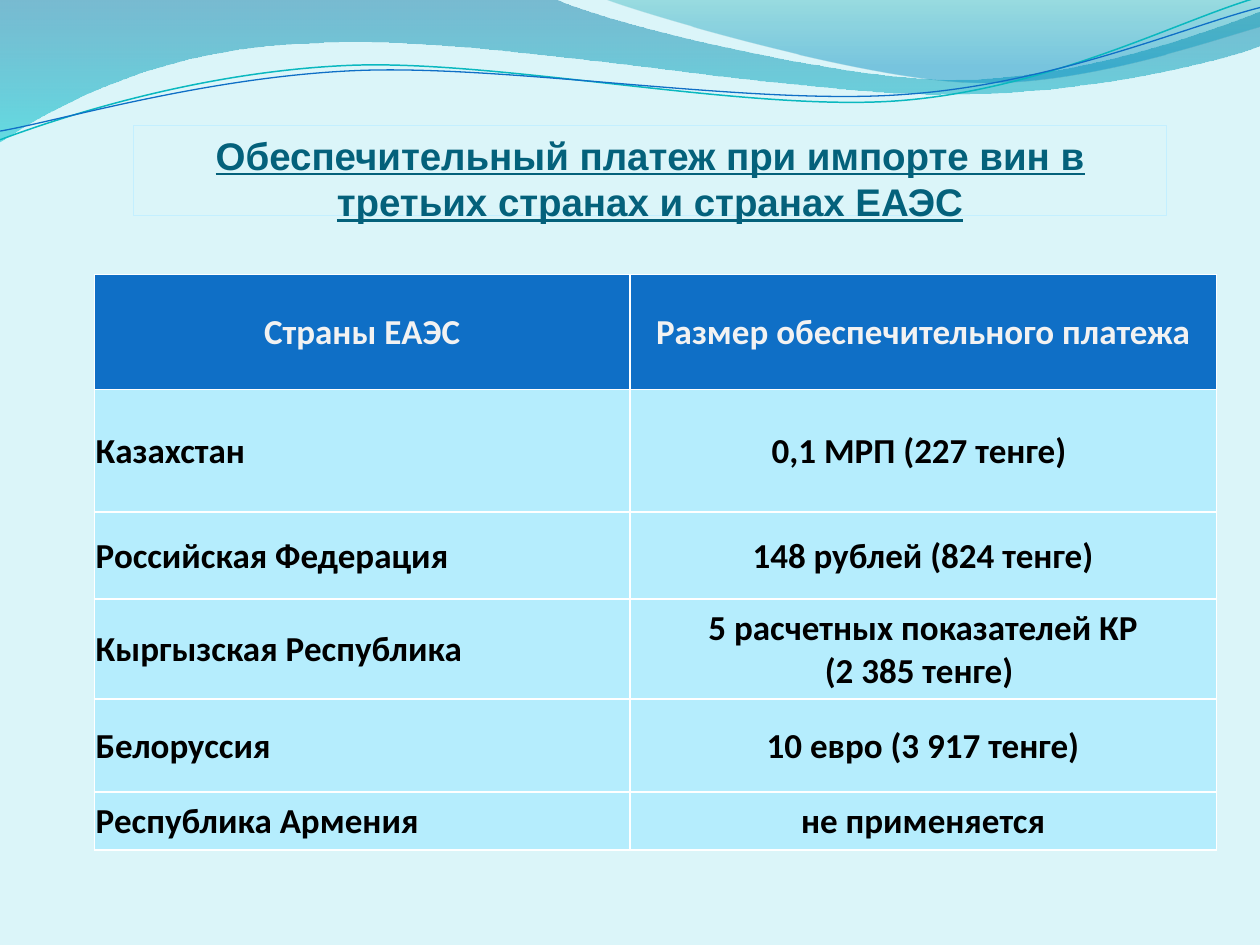
from lxml import etree
from pptx import Presentation
from pptx import util as u
from pptx.dml.color import RGBColor
from pptx.enum import text
from pptx.oxml.ns import qn

COLORS = {
    "background": "DBF5F9", "title": "04617B", "title_border": "C4EFFF",
    "header": "0F6FC6", "header_text": "F2F2F2", "body": "B5EDFD",
    "body_text": "000000", "border": "FFFFFF",
    "teal_line": "0AB8BF", "blue_line": "0F6FC6",
    "deep_blue": "0074A1", "aqua": "00C6CF", "sea": "00A1A9", "sky": "008BBF",
}

# Each wave is a start point, then line ends (x, y) or cubic curves (six numbers).
WIDE_WAVE = [
    (0, 0), (316.8, -0.7),
    (342.7, 12.2, 478.1, 45.4, 545.8, 45.4), (614.2, 45.4, 689.8, 18.7, 720, 6.5),
    (720.7, 25.9),
    (707.8, 31.7, 626.4, 54.7, 537.1, 54), (447.8, 54, 275, 20.2, 185, 24.5),
    (92.9, 25.9, 33.1, 59.8, -0.7, 81.4), (0, 0),
]
RIGHT_WAVE = [
    (344.9, -0.7),
    (366.5, 7.9, 491, 44.6, 553.7, 46.8), (616.3, 49.7, 691.9, 23, 720, 15.1),
    (720, 0), (344.9, -0.7),
]
TEAL_CURVE = [
    (0, 79.9),
    (34.6, 67, 113.8, 41, 199.4, 37.4), (284.4, 33.8, 427, 64.1, 513.4, 57.6),
    (599.8, 51.1, 675.4, 10.8, 718.6, -1.4),
]
BLUE_CURVE = [
    (0, 74.9),
    (33.8, 69.1, 118.1, 43.9, 203.8, 40.3), (290.2, 36.7, 429.8, 60.5, 516.2, 54),
    (601.9, 48.2, 677.5, 15.1, 720, 4.3),
]

ROWS = [
    ("Страны ЕАЭС", "Размер обеспечительного платежа"),
    ("Казахстан", "0,1 МРП (227 тенге) "),
    ("Российская Федерация", "148 рублей (824 тенге)"),
    ("Кыргызская Республика ", "5 расчетных показателей КР\n(2 385 тенге) "),
    ("Белоруссия ", "10 евро (3 917 тенге)"),
    ("Республика Армения ", "не применяется"),
]
COLUMN_WIDTHS = [306, 335]
ROW_HEIGHTS = [65.8, 70, 49.8, 57.1, 53.2, 33.1]


def rgb(name):
    return RGBColor.from_string(COLORS[name])


def write_text(frame, content, size, font, color, align, underline=None):
    """Fill a text frame with bold text, one paragraph per line."""
    frame.word_wrap = True
    frame.text = content
    for para in frame.paragraphs:
        para.alignment = align
        for span in para.runs:
            span.font.size = u.Pt(size)
            span.font.name = font
            span.font.bold = True
            span.font.underline = underline
            span.font.color.rgb = rgb(color)


def add_outline(page, wave, close):
    """Build the outline from segment ends, then bend the curved segments."""
    ends = [(u.Pt(segment[-2]), u.Pt(segment[-1])) for segment in wave]
    builder = page.shapes.build_freeform(*ends[0])
    builder.add_line_segments(ends[1:], close=close)
    shape = builder.convert_to_shape()
    shape.shadow.inherit = False
    lines = list(shape.element.iter(qn("a:lnTo")))
    for line, segment in zip(lines, wave[1:]):
        if len(segment) == 6:
            line.tag = qn("a:cubicBezTo")
            line.clear()
            for x, y in zip(segment[::2], segment[1::2]):
                etree.SubElement(line, qn("a:pt"), x=str(u.Pt(x) - shape.left),
                                 y=str(u.Pt(y) - shape.top))
    return shape


def add_wave(page, wave, stops):
    """Add a vertical gradient wave; stops are (position, color, opacity percent)."""
    shape = add_outline(page, wave, close=True)
    shape.line.fill.background()
    shape.fill.gradient()
    shape.fill.gradient_angle = 270
    for stop, (position, color, opacity) in zip(shape.fill.gradient_stops, stops):
        stop.position = position
        stop.color.rgb = rgb(color)
    fill_colors = shape.element.spPr.iter(qn("a:srgbClr"))
    for node, (position, color, opacity) in zip(fill_colors, stops):
        etree.SubElement(node, qn("a:alpha"), val=str(opacity * 1000))


def add_curve(page, wave, color, width):
    shape = add_outline(page, wave, close=False)
    shape.fill.background()
    shape.line.color.rgb = rgb(color)
    shape.line.width = u.Pt(width)


def add_title(page):
    title = page.shapes.title
    page.shapes.element.append(title.element)  # in front of the waves
    title.left, title.top, title.width, title.height = map(u.Pt, (76.3, 71.6, 590.4, 51.6))
    title.line.color.rgb = rgb("title_border")
    title.line.width = u.Pt(0.75)
    frame = title.text_frame
    write_text(frame, "Обеспечительный платеж при импорте вин в третьих странах и странах ЕАЭС",
               size=22, font="Arial", color="title",
               align=text.PP_ALIGN.CENTER, underline=True)
    frame.auto_size = text.MSO_AUTO_SIZE.NONE
    frame.vertical_anchor = text.MSO_ANCHOR.TOP


def set_borders(cell):
    properties = cell._tc.get_or_add_tcPr()
    for index, side in enumerate(("lnL", "lnR", "lnT", "lnB")):
        line = etree.Element(qn("a:" + side), w=str(u.Pt(1)))
        fill = etree.SubElement(line, qn("a:solidFill"))
        etree.SubElement(fill, qn("a:srgbClr"), val=COLORS["border"])
        properties.insert(index, line)


def add_payment_table(page):
    table = page.shapes.add_table(
        len(ROWS), len(COLUMN_WIDTHS), u.Pt(54), u.Pt(156.8),
        u.Pt(sum(COLUMN_WIDTHS)), u.Pt(sum(ROW_HEIGHTS))).table
    table.horz_banding = False
    for column, width in zip(table.columns, COLUMN_WIDTHS):
        column.width = u.Pt(width)
    for r, (row, height) in enumerate(zip(ROWS, ROW_HEIGHTS)):
        table.rows[r].height = u.Pt(height)
        part = "header" if r == 0 else "body"
        for c, content in enumerate(row):
            cell = table.cell(r, c)
            cell.margin_left = cell.margin_right = cell.margin_top = u.Pt(0.7)
            cell.margin_bottom = 0
            cell.vertical_anchor = text.MSO_ANCHOR.MIDDLE
            cell.fill.solid()
            cell.fill.fore_color.rgb = rgb(part)
            set_borders(cell)
            is_country = r > 0 and c == 0
            align = text.PP_ALIGN.JUSTIFY if is_country else text.PP_ALIGN.CENTER
            write_text(cell.text_frame, content, size=20, font="Calibri",
                       color=part + "_text", align=align)


def main():
    deck = Presentation()
    deck.slide_width, deck.slide_height = u.Pt(720), u.Pt(540)
    page = deck.slides.add_slide(deck.slide_layouts.get_by_name("Title Only"))
    page.background.fill.solid()
    page.background.fill.fore_color.rgb = rgb("background")
    add_wave(page, WIDE_WAVE, [(0, "deep_blue", 45), (1, "aqua", 55)])
    add_wave(page, RIGHT_WAVE, [(0, "sea", 30), (0.8, "sky", 45)])
    add_curve(page, TEAL_CURVE, "teal_line", 0.85)
    add_curve(page, BLUE_CURVE, "blue_line", 0.75)
    add_title(page)
    add_payment_table(page)
    deck.save("out.pptx")


if __name__ == "__main__":
    main()
